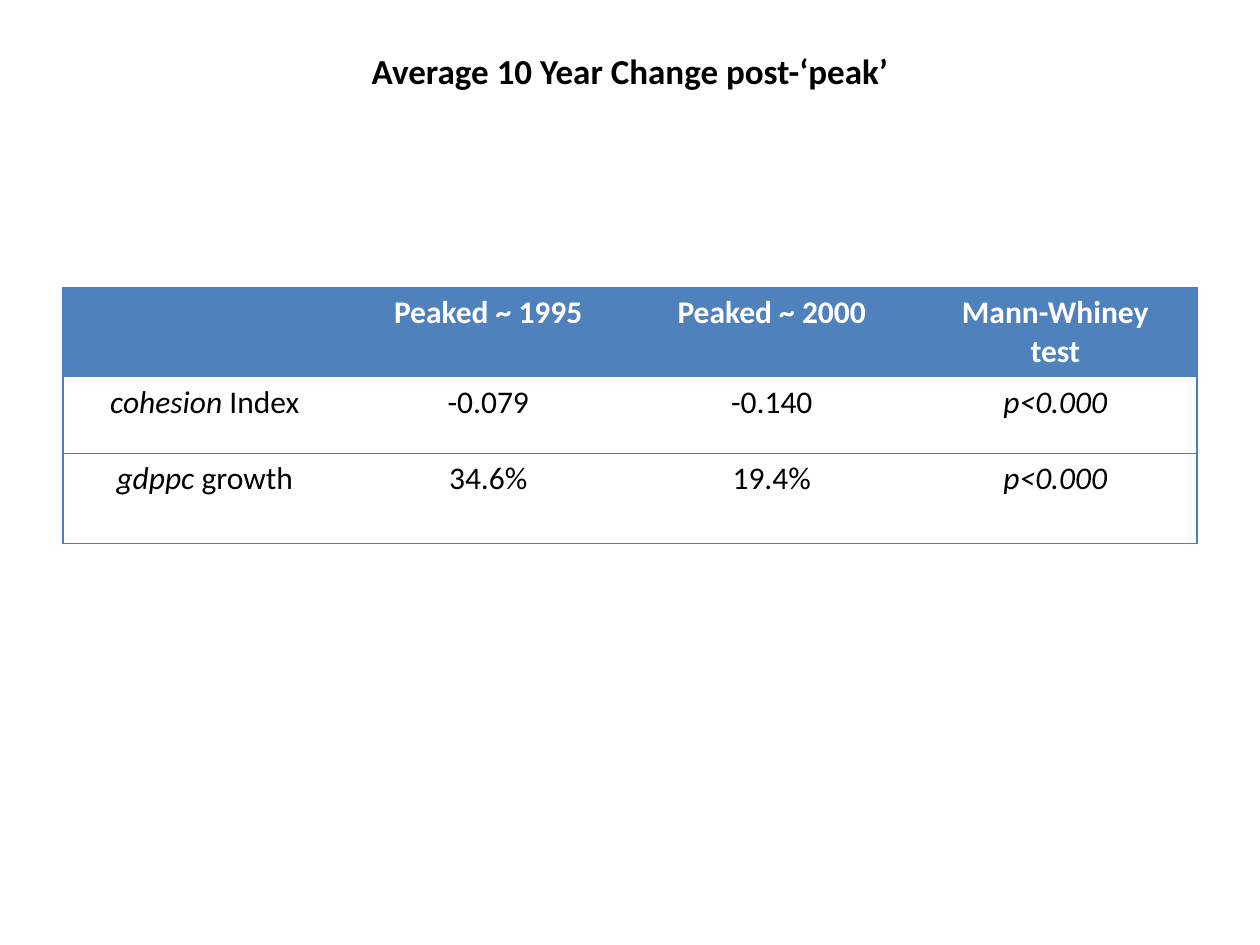
from lxml.etree import SubElement
from pptx import Presentation
from pptx.dml.color import RGBColor
from pptx.enum.text import MSO_ANCHOR, PP_ALIGN
from pptx.oxml.ns import qn
from pptx.util import Inches, Pt

COLORS = {"header": "4F81BD", "border": "4B7EBC", "white": "FFFFFF", "black": "000000"}
NO_STYLE = "{2D5ABB26-0587-4C30-8999-92F81FD0307C}"


def add_run(paragraph, text, size, color, bold=False, italic=False):
    run = paragraph.add_run()
    run.text = text
    run.font.name = "Calibri"
    run.font.size = Pt(size)
    run.font.bold = bold
    run.font.italic = italic
    run.font.color.rgb = RGBColor.from_string(COLORS[color])


def add_border(cell, side, position):
    """Draw one cell edge; borders must precede the fill in the cell properties."""
    properties = cell._tc.get_or_add_tcPr()
    line = SubElement(properties, qn(f"a:ln{side}"), w=str(Pt(0.75)))
    fill = SubElement(line, qn("a:solidFill"))
    SubElement(fill, qn("a:srgbClr"), val=COLORS["border"])
    properties.insert(position, line)


presentation = Presentation()
presentation.slide_width = Inches(10)
presentation.slide_height = Inches(7.5)
slide = presentation.slides.add_slide(presentation.slide_layouts[5])

title = slide.shapes.title
title.left, title.top = Inches(0.5), Inches(0.3)
title.width, title.height = Inches(9), Inches(0.52)
title.text_frame.vertical_anchor = MSO_ANCHOR.MIDDLE
title_paragraph = title.text_frame.paragraphs[0]
title_paragraph.alignment = PP_ALIGN.CENTER
add_run(title_paragraph, "Average 10 Year Change post-‘peak’", 20, "black", bold=True)

# Each cell is a list of paragraphs, each paragraph a list of (text, italic) runs.
rows = [
    [
        [],
        [[("Peaked ~ 1995", False)]],
        [[("Peaked ~ 2000", False)]],
        [[("Mann-Whiney", False)], [("test", False)]],
    ],
    [
        [[("cohesion ", True), ("Index", False)]],
        [[("-0.079", False)]],
        [[("-0.140", False)]],
        [[("p<0.000", True)]],
    ],
    [
        [[("gdppc ", True), ("growth", False)]],
        [[("34.6%", False)]],
        [[("19.4%", False)]],
        [[("p<0.000", True)]],
    ],
]
row_heights = [0.71, 0.61, 0.71]
column_count = len(rows[0])

table_frame = slide.shapes.add_table(
    len(rows), column_count, Inches(0.5), Inches(2.28), Inches(9), Inches(sum(row_heights))
)
table = table_frame.table
table.horz_banding = False
table._tbl.tblPr.find(qn("a:tableStyleId")).text = NO_STYLE

for row_index, (row, height) in enumerate(zip(rows, row_heights)):
    table.rows[row_index].height = Inches(height)
    is_header = row_index == 0
    for column_index, paragraphs in enumerate(row):
        cell = table.cell(row_index, column_index)
        cell.fill.solid()
        cell.fill.fore_color.rgb = RGBColor.from_string(COLORS["header" if is_header else "white"])

        sides = ["T", "B"]
        if column_index == column_count - 1:
            sides.insert(0, "R")
        if column_index == 0:
            sides.insert(0, "L")
        for position, side in enumerate(sides):
            add_border(cell, side, position)

        for paragraph_index, runs in enumerate(paragraphs):
            text_frame = cell.text_frame
            paragraph = text_frame.add_paragraph() if paragraph_index else text_frame.paragraphs[0]
            paragraph.alignment = PP_ALIGN.CENTER
            for text, italic in runs:
                add_run(paragraph, text, 18, "white" if is_header else "black", is_header, italic)

presentation.save("out.pptx")
